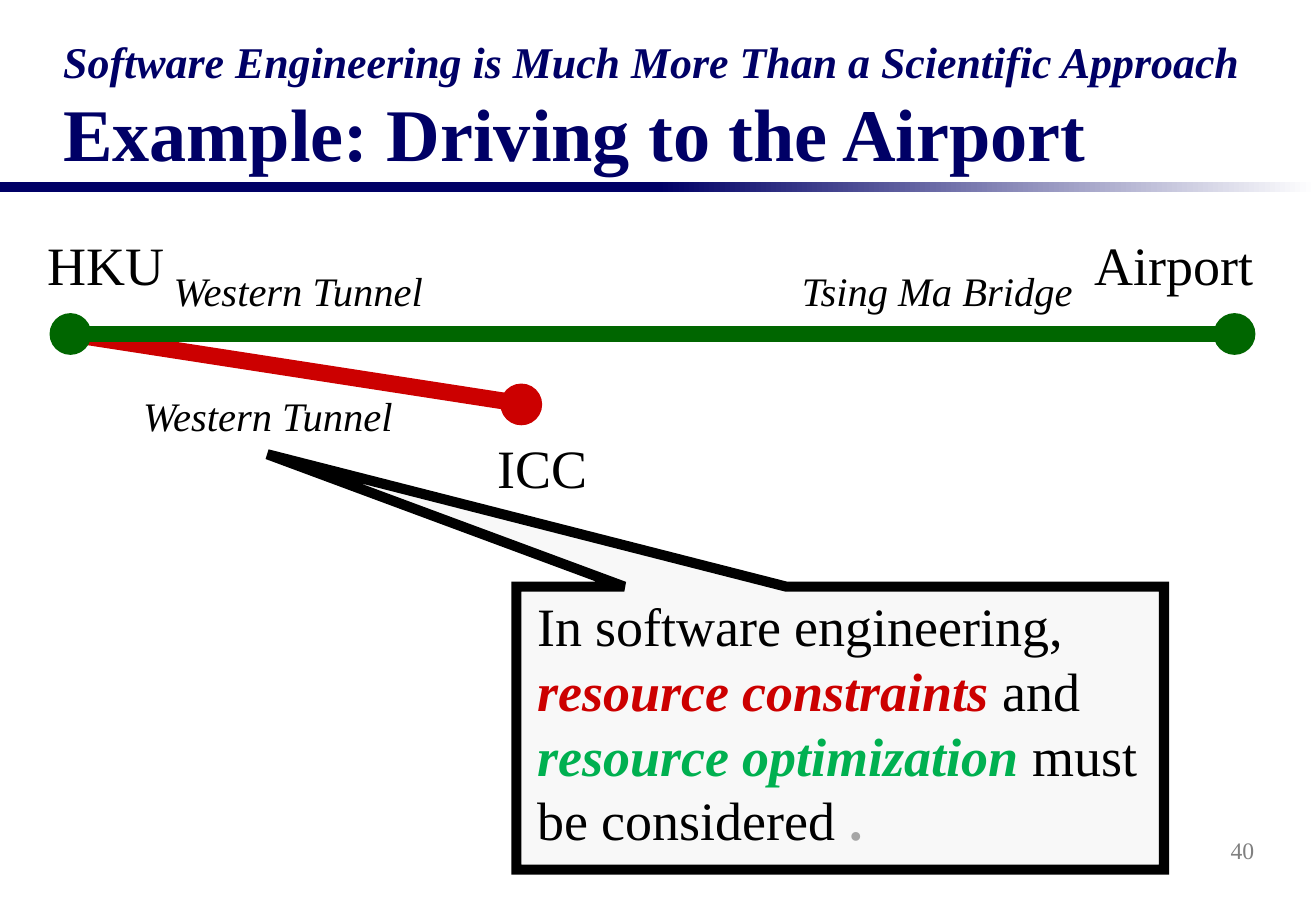
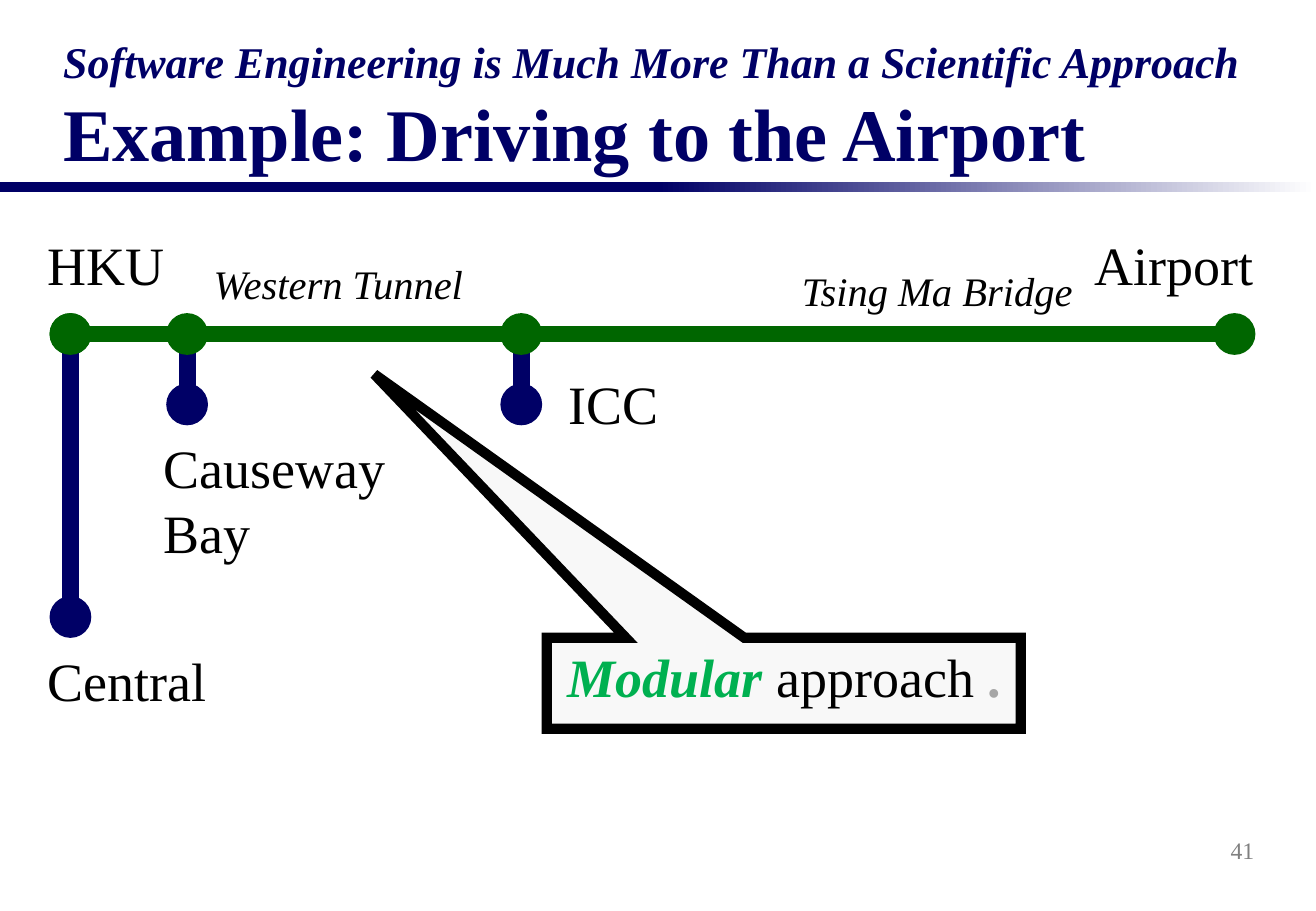
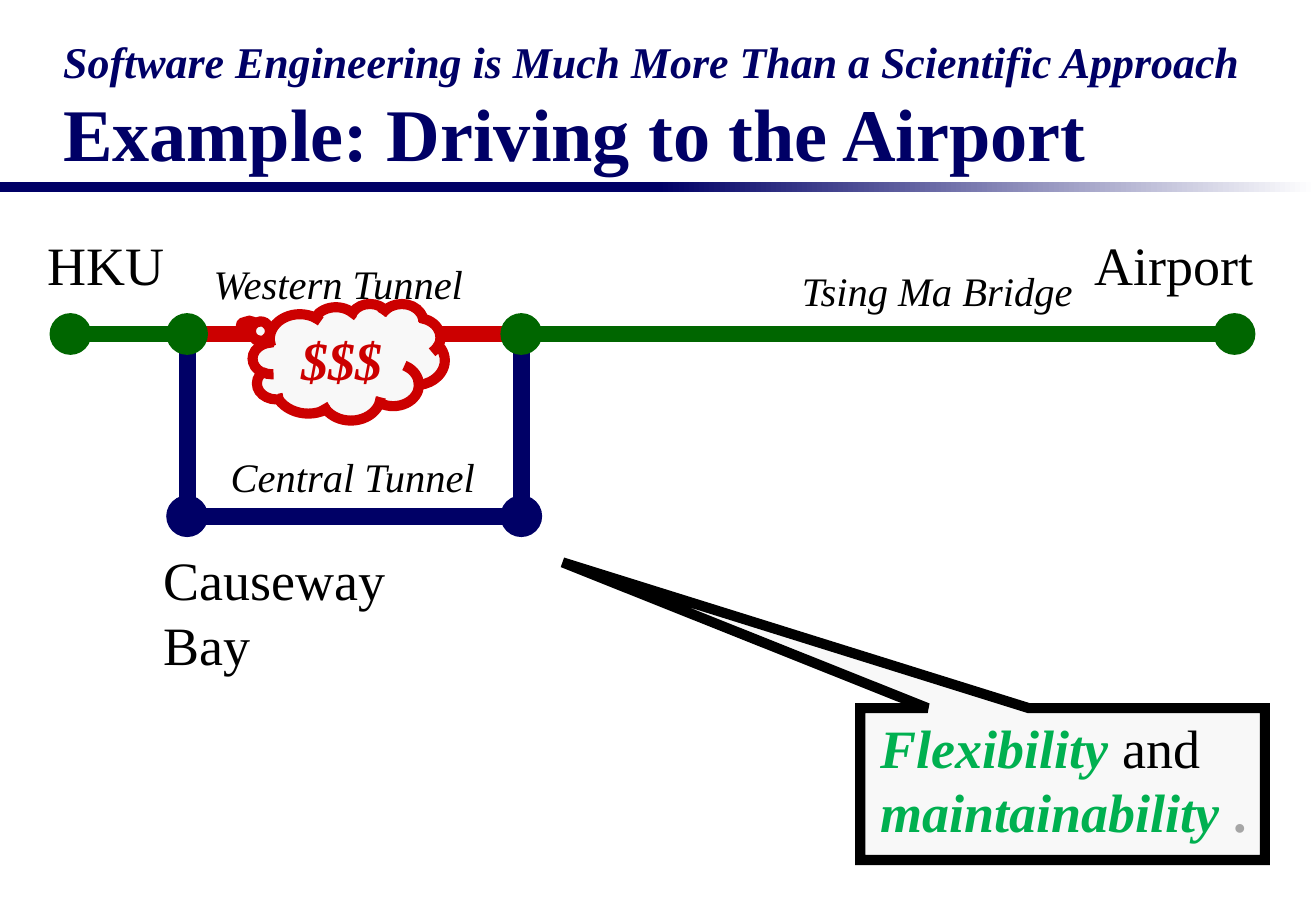
from lxml import etree
from pptx import Presentation
from pptx.dml.color import RGBColor
from pptx.enum.shapes import MSO_CONNECTOR, MSO_SHAPE
from pptx.enum.text import MSO_ANCHOR, MSO_AUTO_SIZE, PP_ALIGN
from pptx.oxml.ns import qn
from pptx.util import Inches, Pt

RECTANGLE, ELLIPSE = MSO_SHAPE.RECTANGLE, MSO_SHAPE.OVAL
CALLOUT, CLOUD = MSO_SHAPE.RECTANGULAR_CALLOUT, MSO_SHAPE.CLOUD_CALLOUT
STRAIGHT = MSO_CONNECTOR.STRAIGHT
TOP, MIDDLE, BOTTOM = MSO_ANCHOR.TOP, MSO_ANCHOR.MIDDLE, MSO_ANCHOR.BOTTOM
LEFT, CENTER, RIGHT = PP_ALIGN.LEFT, PP_ALIGN.CENTER, PP_ALIGN.RIGHT
NO_FIT = MSO_AUTO_SIZE.NONE

FONT = "Times New Roman"
NAVY, GREEN, RED, BLACK = "000066", "006600", "CC0000", "000000"
WHITE, PALE, GRAY = "FFFFFF", "F8F8F8", "808080"
PLAIN = (BLACK, False, False)
GOOD = ("00B050", True, True)
BAD = (RED, True, True)
DOT = (" .", ("A6A6A6", True, False))

PAGE_WIDTH, PAGE_HEIGHT = 10.83, 7.5
HKU, CAUSEWAY, ICC, AIRPORT = 0.58, 1.54, 4.29, 10.16
MAIN_ROAD, SIDE_ROAD, LOW_ROAD, CENTRAL = 2.75, 3.33, 4.25, 5.08
STOP_SIZE = 0.33


def color(code):
    return RGBColor.from_string(code)


def inches(*lengths):
    return [Inches(length) for length in lengths]


def add_span(para, text, size, style=PLAIN):
    span = para.add_run()
    span.text = text
    font = span.font
    font.name, font.size = FONT, Pt(size)
    font.color.rgb = color(style[0])
    font.bold, font.italic = style[1:]


def add_outlined(page, kind, box, fill, line, width):
    shape = page.shapes.add_shape(kind, *inches(*box))
    shape.shadow.inherit = False
    shape.fill.solid()
    shape.fill.fore_color.rgb = color(fill)
    shape.line.color.rgb = color(line)
    shape.line.width = Pt(width)
    outline = shape.element.spPr.find(qn("a:ln"))
    etree.SubElement(outline, qn("a:miter")).set("lim", "800000")
    return shape


def add_band(page, layout, top, height):
    half = PAGE_WIDTH / 2
    for left in (0, half):
        bar = page.shapes.add_shape(RECTANGLE, *inches(left, top, half, height))
        bar.shadow.inherit = False
        bar.line.fill.background()
        if left:
            bar.fill.gradient()
            bar.fill.gradient_angle = 0
            for stop, code in zip(bar.fill.gradient_stops, (NAVY, WHITE)):
                stop.color.rgb = color(code)
        else:
            bar.fill.solid()
            bar.fill.fore_color.rgb = color(NAVY)
        layout.shapes.element.append(bar.element)


def add_title(page):
    title = page.shapes.title
    title.left, title.top, title.width, title.height = inches(0.42, 0.29, 10, 1.21)
    frame = title.text_frame
    frame.auto_size = NO_FIT
    frame.vertical_anchor = BOTTOM
    para = frame.paragraphs[0]
    para.alignment = LEFT
    add_span(para, "Software Engineering is Much More Than a Scientific Approach",
             26, (NAVY, True, True))
    para.add_line_break()
    add_span(para, "Example: Driving to the Airport", 44, (NAVY, True, False))


def add_page(deck, layout):
    page = deck.slides.add_slide(layout)
    add_title(page)
    return page


def add_page_number(page, number):
    box = page.shapes.add_textbox(*inches(8.16, 6.75, 2.26, 0.5))
    box.text_frame.vertical_anchor = MIDDLE
    box.text_frame.word_wrap = True
    para = box.text_frame.paragraphs[0]
    para.alignment = RIGHT
    add_span(para, str(number), 14, (GRAY, False, False))


def add_label(page, box, text, size=32, style=PLAIN):
    label = page.shapes.add_textbox(*inches(*box))
    frame = label.text_frame
    frame.word_wrap = True
    frame.margin_right = 0
    for index, line in enumerate(text.split("\n")):
        para = frame.add_paragraph() if index else frame.paragraphs[0]
        add_span(para, line, size, style)


def add_road_name(page, left, top, width, text):
    add_label(page, (left, top, width, 0.5), text, 24, (BLACK, False, True))


def add_road(page, start, end, code):
    road = page.shapes.add_connector(STRAIGHT, *inches(*start, *end))
    road.line.color.rgb = color(code)
    road.line.width = Pt(10)
    etree.SubElement(road.element.spPr, qn("a:effectLst"))


def add_stop(page, x, y, code):
    box = (x - STOP_SIZE / 2, y - STOP_SIZE / 2, STOP_SIZE, STOP_SIZE)
    add_outlined(page, ELLIPSE, box, code, code, 1)


def add_pointed(page, kind, box, tip, line):
    left, top, width, height = box
    shape = add_outlined(page, kind, box, PALE, line, 6)
    shape.adjustments[0] = (tip[0] - left) / width - 0.5
    shape.adjustments[1] = (tip[1] - top) / height - 0.5
    return shape


def add_callout(page, box, tip, spans):
    frame = add_pointed(page, CALLOUT, box, tip, BLACK).text_frame
    frame.word_wrap = True
    frame.vertical_anchor = TOP
    frame.margin_left = Inches(0.17)
    para = frame.paragraphs[0]
    para.alignment = LEFT
    for text, style in spans:
        add_span(para, text, 32, style)


def add_cloud(page, box, tip, text):
    frame = add_pointed(page, CLOUD, box, tip, RED).text_frame
    frame.word_wrap = False
    frame.vertical_anchor = MIDDLE
    para = frame.paragraphs[0]
    para.alignment = CENTER
    add_span(para, text, 32, BAD)


def add_main_route(page, tunnel_left, tunnel_top):
    add_road(page, (HKU, MAIN_ROAD), (AIRPORT, MAIN_ROAD), GREEN)
    for x in (HKU, AIRPORT):
        add_stop(page, x, MAIN_ROAD, GREEN)
    add_label(page, (0.29, 1.86, 1.16, 0.63), "HKU")
    add_label(page, (8.91, 1.86, 1.51, 0.63), "Airport")
    add_road_name(page, tunnel_left, tunnel_top, 2.3, "Western Tunnel")
    add_road_name(page, 6.5, 2.14, 2.46, "Tsing Ma Bridge")


def add_branch(page, x, end):
    add_road(page, (x, MAIN_ROAD), (x, end), NAVY)
    add_stop(page, x, end, NAVY)
    add_stop(page, x, MAIN_ROAD, GREEN)


def add_causeway_label(page, road):
    add_label(page, (1.25, road + 0.2, 2.03, 1.17), "Causeway\nBay")


def build_constraints(page):
    add_road(page, (HKU, MAIN_ROAD), (4.33, SIDE_ROAD), RED)
    add_road_name(page, 1.08, 3.17, 2.3, "Western Tunnel")
    add_main_route(page, 1.33, 2.14)
    add_stop(page, ICC, SIDE_ROAD, RED)
    add_label(page, (4, 3.53, 0.94, 0.63), "ICC")
    add_callout(page, (4.25, 4.83, 5.33, 2.33), (2.2, 3.74), [
        ("In software engineering, ", PLAIN), ("resource constraints", BAD),
        (" and ", PLAIN), ("resource optimization", GOOD),
        (" must be considered", PLAIN), DOT])
    add_page_number(page, 40)


def build_modular(page):
    add_main_route(page, 1.66, 2.08)
    add_callout(page, (4.5, 5.25, 3.9, 0.75), (3.08, 3.08),
                [("Modular ", GOOD), ("approach", PLAIN), DOT])
    for x, end in ((HKU, CENTRAL), (CAUSEWAY, SIDE_ROAD), (ICC, SIDE_ROAD)):
        add_branch(page, x, end)
    add_label(page, (0.29, 5.28, 1.51, 0.63), "Central")
    add_causeway_label(page, SIDE_ROAD)
    add_label(page, (4.58, 3, 0.94, 0.63), "ICC")
    add_page_number(page, 41)


def build_flexible(page):
    add_main_route(page, 1.66, 2.08)
    add_road(page, (CAUSEWAY, MAIN_ROAD), (ICC, MAIN_ROAD), RED)
    add_road(page, (CAUSEWAY, LOW_ROAD), (ICC, LOW_ROAD), NAVY)
    for x in (CAUSEWAY, ICC):
        add_branch(page, x, LOW_ROAD)
    add_road_name(page, 1.8, 3.67, 2.23, "Central Tunnel")
    add_causeway_label(page, LOW_ROAD)
    add_callout(page, (7.08, 5.83, 3.33, 1.25), (4.63, 4.63),
                [("Flexibility ", GOOD), ("and ", PLAIN),
                 ("maintainability", GOOD), DOT])
    add_cloud(page, (2.08, 2.5, 1.58, 0.96), (2.01, 2.68), "$$$")


def main():
    deck = Presentation()
    deck.slide_width, deck.slide_height = inches(PAGE_WIDTH, PAGE_HEIGHT)
    layout = deck.slide_layouts[5]
    pages = [add_page(deck, layout) for _ in range(3)]
    add_band(pages[0], layout, 1.5, 0.08)
    for build, page in zip((build_constraints, build_modular, build_flexible), pages):
        build(page)
    deck.save("out.pptx")


if __name__ == "__main__":
    main()
